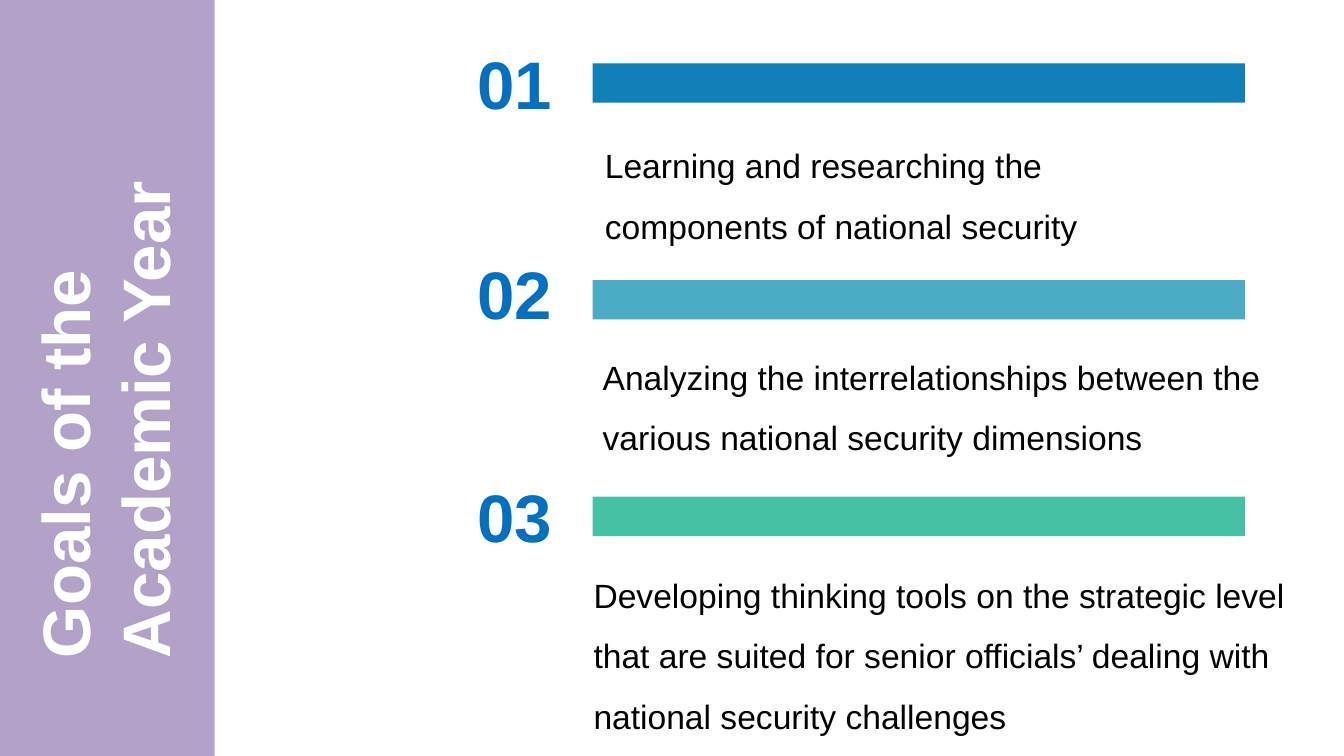
from pptx import Presentation
from pptx.dml.color import RGBColor
from pptx.enum.shapes import MSO_SHAPE
from pptx.enum.text import MSO_ANCHOR, MSO_AUTO_SIZE, PP_ALIGN
from pptx.util import Pt

RECT = MSO_SHAPE.RECTANGLE
MIDDLE = MSO_ANCHOR.MIDDLE
FIXED = MSO_AUTO_SIZE.NONE
LEFT, CENTER = PP_ALIGN.LEFT, PP_ALIGN.CENTER

WHITE = RGBColor(0xFF, 0xFF, 0xFF)
BLACK = RGBColor(0, 0, 0)
LILAC = RGBColor(0xB3, 0xA2, 0xC7)
NAVY = RGBColor(0x00, 0x70, 0xC0)
BLUE = RGBColor(0x0E, 0x7F, 0xB7)
AQUA = RGBColor(0x4B, 0xAC, 0xC6)
GREEN = RGBColor(0x45, 0xC1, 0xA4)

TITLE = "Goals of the Academic Year"
GOALS = [
    ("01", 26.6, BLUE, "Learning and researching the components of national security",
     (423.4, 85.7, 416.2, 90.7), 8.64),
    ("02", 176.4, AQUA, "Analyzing the interrelationships between the various national security dimensions",
     (423.4, 236.9, 521.3, 90.7), 7.2),
    ("03", 336.2, GREEN, "Developing thinking tools on the strategic level that are suited for "
     "senior officials’ dealing with national security challenges",
     (416.9, 392.4, 521.3, 134.6), 7.2),
]
BAR_TOP, BAR_STEP = 45.2, 154.8

deck = Presentation()
deck.slide_width, deck.slide_height = Pt(960), Pt(540)
slide = deck.slides.add_slide(deck.slide_layouts[5])
shapes = slide.shapes


def add_bar(box, color):
    bar = shapes.add_shape(RECT, *map(Pt, box))
    bar.shadow.inherit = False
    bar.fill.solid()
    bar.fill.fore_color.rgb = color
    bar.line.fill.background()
    return bar


def set_text(shape, text, size, color, bold=False, align=LEFT, inset=7.2, space=1):
    frame = shape.text_frame
    frame.text = text
    frame.word_wrap = True
    frame.auto_size = FIXED
    frame.margin_left = frame.margin_right = Pt(inset)
    frame.margin_top = frame.margin_bottom = Pt(3.6)
    line = frame.paragraphs[0]
    line.alignment = align
    line.line_spacing = space
    font = line.runs[0].font
    font.name = "Arial"
    font.size = Pt(size)
    font.bold = bold
    font.color.rgb = color


band = add_bar((0, 0, 153.4, 540), LILAC)
title = shapes.title
band._element.addnext(title._element)
title.left, title.top = Pt(-128.9), Pt(212.4)
title.width, title.height = Pt(406.1), Pt(123.8)
title.rotation = 270
set_text(title, TITLE, 48, WHITE, bold=True)
title.text_frame.vertical_anchor = MIDDLE

for row, (num, top, color, goal, box, inset) in enumerate(GOALS):
    add_bar((423.4, BAR_TOP + row * BAR_STEP, 465.8, 28.1), color)
    note = shapes.add_textbox(*map(Pt, box))
    set_text(note, goal, 24, BLACK, inset=inset, space=1.5)
    label = shapes.add_textbox(Pt(329.8), Pt(top), Pt(75.6), Pt(65.5))
    set_text(label, num, 48, NAVY, bold=True, align=CENTER, inset=8.64)

deck.save("out.pptx")
